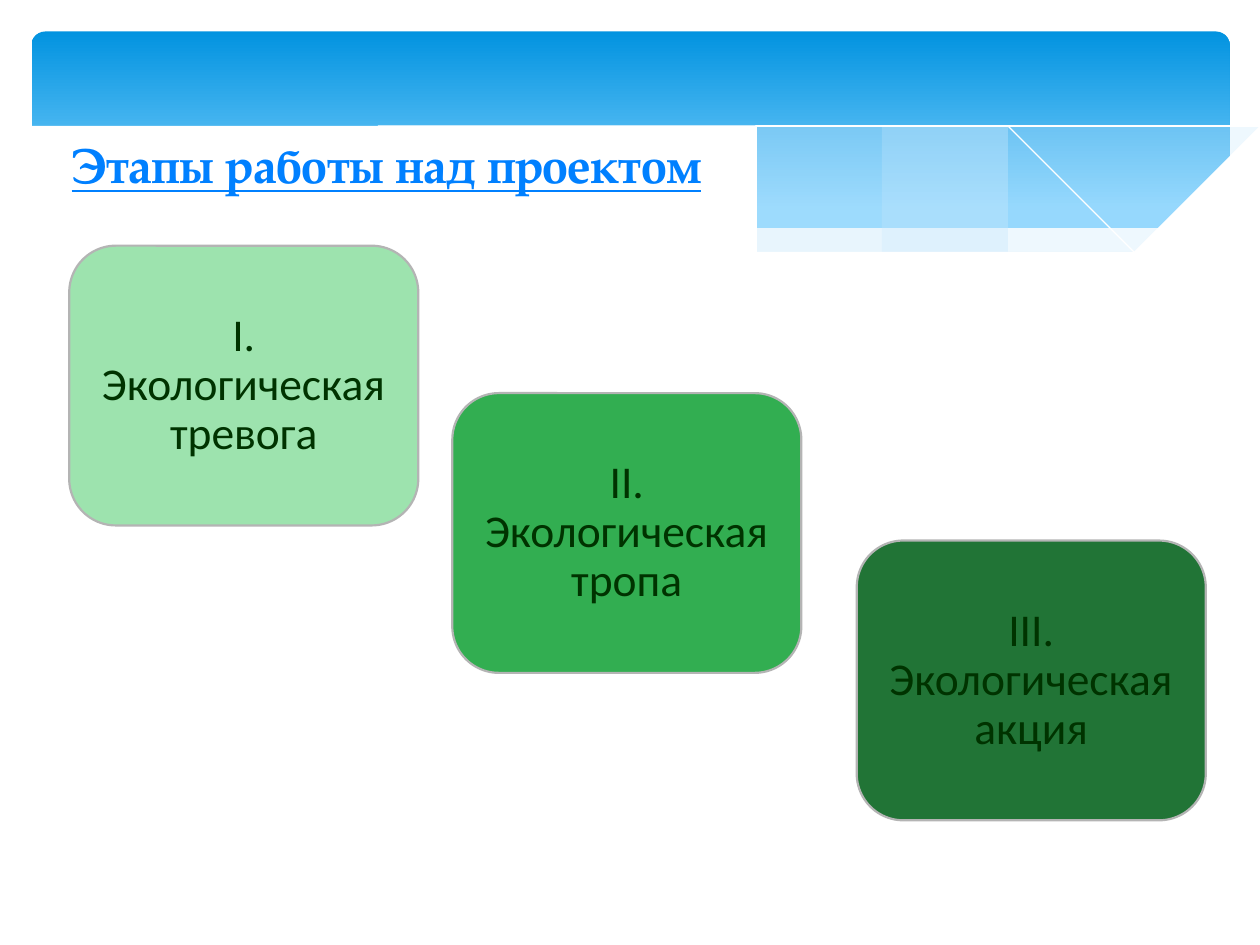
from lxml.etree import SubElement
from pptx import Presentation
from pptx.dml.color import RGBColor
from pptx.enum.shapes import MSO_SHAPE
from pptx.enum.text import MSO_ANCHOR, PP_ALIGN
from pptx.oxml.ns import qn
from pptx.util import Inches, Pt

TITLE = "Этапы работы над проектом"
STAGES = [
    ("I. Экологическая тревога", "light"),
    ("II. Экологическая тропа", "middle"),
    ("III. Экологическая акция", "dark"),
]
COLORS = {
    "banner_top": "0293E0", "banner_bottom": "83D3FE", "veil": "C6E7FC",
    "white": "FFFFFF", "title": "0080FF", "border": "B4B4B4", "text": "003300",
    "light": "9DE3AE", "middle": "32AE51", "dark": "217436",
}

# Each wave is a list of smooth edges, given by their knots in inches
RIGHT_VEIL = [
    [(9.76, 0.94), (9.35, 1.01), (8.61, 1.18), (7.79, 1.37), (6.61, 1.6)],
    [(6.61, 1.6), (7.32, 1.68), (8.03, 1.72), (8.63, 1.7), (9.21, 1.6), (9.76, 1.41)],
]
LONG_VEIL = [
    [(8.93, 1.67), (8.07, 1.54), (7.06, 1.34), (6.29, 1.16), (5.41, 0.97),
     (4.65, 0.86), (3.8, 0.8), (3.28, 0.81), (2.86, 0.86)],
    [(2.86, 0.86), (3.62, 0.97), (4.49, 1.16), (5.66, 1.43), (6.5, 1.58),
     (7.22, 1.68), (7.96, 1.73), (8.48, 1.72), (8.93, 1.67)],
]
FALLING_LINE = [[(3.09, 0.9), (3.44, 0.84), (4.16, 0.81), (5.1, 0.86), (6.08, 0.98),
                 (6.95, 1.14), (7.95, 1.36), (9.07, 1.66)]]
RISING_LINE = [[(6.13, 1.51), (6.95, 1.3), (7.76, 1.11), (8.66, 0.93), (9.24, 0.84), (9.75, 0.8)]]
WHITE_WAVE = [
    [(9.77, 1.41), (9.3, 1.57), (8.75, 1.67), (8.09, 1.71), (7.26, 1.67), (6.48, 1.56),
     (5.55, 1.39), (4.47, 1.14), (3.65, 0.96), (2.92, 0.85), (2.3, 0.79), (1.77, 0.78),
     (1.19, 0.82), (0.67, 0.91), (0.23, 1.07)],
    [(0.23, 2.24), (9.77, 2.24)],
]


def color(name):
    return RGBColor.from_string(COLORS[name])


def smooth(knots, steps=6):
    """Points of a Catmull-Rom curve through the knots."""
    padded = [knots[0], *knots, knots[-1]]
    points = [knots[0]]
    for a, b, c, d in zip(padded, padded[1:], padded[2:], padded[3:]):
        for step in range(1, steps + 1):
            t = step / steps
            points.append(tuple(
                q + t / 2 * (r - p + t * (2 * p - 5 * q + 4 * r - s + t * (3 * (q - r) + s - p)))
                for p, q, r, s in zip(a, b, c, d)))
    return points


def add_wave(shapes, edges, fill=None, opacity=100):
    """A filled wave, or a white hairline when no fill is given."""
    points = [point for edge in edges for point in smooth(edge)]
    builder = shapes.build_freeform(*points[0], scale=Inches(1))
    builder.add_line_segments(points[1:], close=fill is not None)
    wave = builder.convert_to_shape()
    wave.shadow.inherit = False
    if fill is None:
        wave.fill.background()
        wave.line.color.rgb = color("white")
        wave.line.width = 0
        return
    wave.line.fill.background()
    wave.fill.solid()
    wave.fill.fore_color.rgb = color(fill)
    if opacity < 100:
        tint = wave.fill._xPr.find(".//" + qn("a:srgbClr"))
        SubElement(tint, qn("a:alpha"), val=str(opacity * 1000))


def add_banner(shapes):
    banner = shapes.add_shape(MSO_SHAPE.ROUNDED_RECTANGLE, Inches(0.25), Inches(0.25),
                              Inches(9.51), Inches(1.56))
    banner.adjustments[0] = 0.07
    banner.shadow.inherit = False
    banner.line.fill.background()
    banner.fill.gradient()
    banner.fill.gradient_angle = 270
    ramp = [(0, "banner_top"), (0.9, "banner_bottom")]
    for stop, (position, name) in zip(banner.fill.gradient_stops, ramp):
        stop.position = position
        stop.color.rgb = color(name)

    add_wave(shapes, RIGHT_VEIL, "veil", 29)
    add_wave(shapes, LONG_VEIL, "veil", 40)
    add_wave(shapes, FALLING_LINE)
    add_wave(shapes, RISING_LINE)
    add_wave(shapes, WHITE_WAVE, "white")


def add_title(shapes):
    frame = shapes.add_textbox(Inches(0.47), Inches(1.02), Inches(5.86), Inches(0.57)).text_frame
    frame.word_wrap = True
    frame.text = TITLE
    font = frame.paragraphs[0].runs[0].font
    font.name, font.size = "TeX Gyre Pagella", Pt(28)
    font.bold = font.underline = True
    font.color.rgb = color("title")


def add_stage(shapes, index, label, fill):
    # Cards step down to the right like a staircase
    left = (0.55, 3.59, 6.8)[index]
    top = 1.95 + 1.17 * index
    card = shapes.add_shape(MSO_SHAPE.ROUNDED_RECTANGLE, Inches(left), Inches(top),
                            Inches(2.77), Inches(2.22))
    card.shadow.inherit = False
    card.fill.solid()
    card.fill.fore_color.rgb = color(fill)
    card.line.color.rgb = color("border")
    card.line.width = Pt(1.25)

    frame = card.text_frame
    frame.margin_left = frame.margin_right = Inches(0.11)
    frame.margin_top = frame.margin_bottom = Inches(0.11)
    frame.word_wrap = True
    frame.vertical_anchor = MSO_ANCHOR.MIDDLE
    frame.text = label
    paragraph = frame.paragraphs[0]
    paragraph.alignment = PP_ALIGN.CENTER
    paragraph.line_spacing = 0.9
    font = paragraph.runs[0].font
    font.name, font.size = "Calibri", Pt(26)
    font.color.rgb = color("text")


def main():
    presentation = Presentation()
    presentation.slide_width, presentation.slide_height = Inches(10), Inches(7.5)
    shapes = presentation.slides.add_slide(presentation.slide_layouts[6]).shapes
    add_banner(shapes)
    add_title(shapes)
    for index, (label, fill) in enumerate(STAGES):
        add_stage(shapes, index, label, fill)
    presentation.save("out.pptx")


if __name__ == "__main__":
    main()
